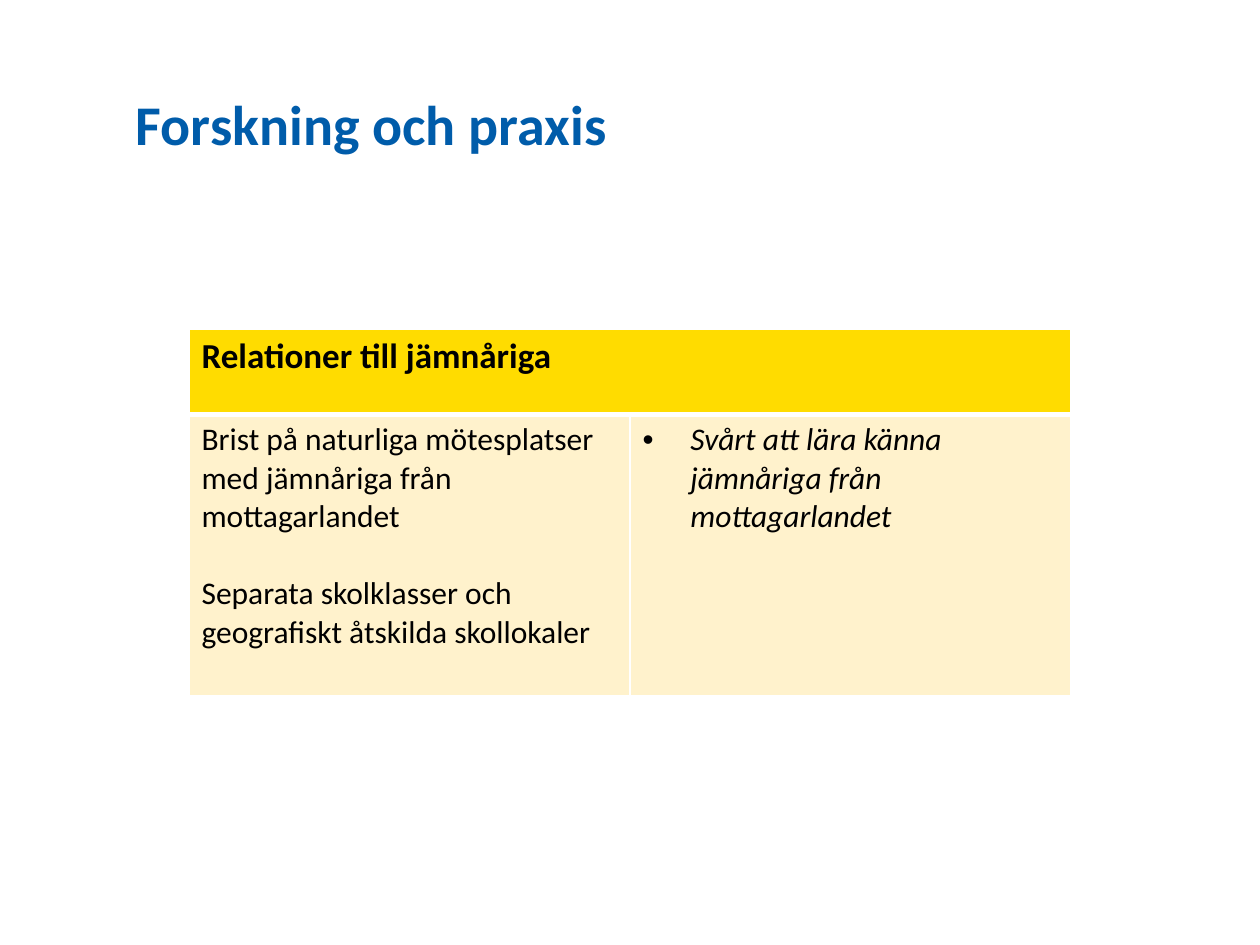
import pptx
import pptx.dml.color
import pptx.enum.text
import pptx.oxml
import pptx.oxml.ns
import pptx.util

Inches, Pt = pptx.util.Inches, pptx.util.Pt

# Content
TITLE = "Forskning och praxis"
HEADING = "Relationer till jämnåriga"
CONDITIONS = [
    "Brist på naturliga mötesplatser med jämnåriga från mottagarlandet",
    "Separata skolklasser och geografiskt åtskilda skollokaler",
]
EXPERIENCES = ["Svårt att lära känna jämnåriga från mottagarlandet"]

THEME = {
    "font": "Calibri",
    "title": "005CAA", "text": "000000", "border": "FFFFFF",
    "heading_fill": "FFDC00", "body_fill": "FFF2CC",
    "title_size": 32, "heading_size": 20, "body_size": 18,
    "paragraph_gap": 22,
}
COLUMN_WIDTH = 3.5
ROW_HEIGHTS = [0.68, 2.23]


def rgb(name):
    return pptx.dml.color.RGBColor.from_string(THEME[name])


def write(frame, lines, size, color="text", bold=False, italic=False, bulleted=False):
    frame.word_wrap = True
    for index, line in enumerate(lines):
        para = frame.paragraphs[0] if index == 0 else frame.add_paragraph()
        para.text = line
        if index:
            para.space_before = Pt(THEME["paragraph_gap"])
        if bulleted:
            add_bullet(para)
        font = para.font
        font.name, font.size = THEME["font"], Pt(THEME[size])
        font.bold, font.italic = bold, italic
        font.color.rgb = rgb(color)


def add_bullet(para):
    properties = para._p.get_or_add_pPr()
    indent = Inches(0.38)
    properties.set("marL", str(indent))
    properties.set("indent", str(-indent))
    namespace = pptx.oxml.ns.nsdecls("a")
    for xml in (f'<a:buFont {namespace} typeface="Arial"/>',
                f'<a:buChar {namespace} char="•"/>'):
        properties.append(pptx.oxml.parse_xml(xml))


def style_cell(cell, fill, bottom=1):
    # Borders precede the fill in the cell properties
    properties = cell._tc.get_or_add_tcPr()
    for side, width in (("L", 1), ("R", 1), ("T", 1), ("B", bottom)):
        properties.append(pptx.oxml.parse_xml(
            f'<a:ln{side} {pptx.oxml.ns.nsdecls("a")} w="{Pt(width)}"><a:solidFill>'
            f'<a:srgbClr val="{THEME["border"]}"/></a:solidFill></a:ln{side}>'))
    cell.fill.solid()
    cell.fill.fore_color.rgb = rgb(fill)


deck = pptx.Presentation()
deck.slide_width, deck.slide_height = Inches(10), Inches(7.5)
slide = deck.slides.add_slide(deck.slide_layouts[6])

# Title
box = slide.shapes.add_textbox(Inches(0.98), Inches(0.66), Inches(8.03), Inches(1.18))
box.text_frame.vertical_anchor = pptx.enum.text.MSO_ANCHOR.TOP
write(box.text_frame, [TITLE], "title_size", color="title", bold=True)

# Table
table = slide.shapes.add_table(
    2, 2, Inches(1.5), Inches(2.61),
    Inches(2 * COLUMN_WIDTH), Inches(sum(ROW_HEIGHTS))).table
table.horz_banding = False
for column in table.columns:
    column.width = Inches(COLUMN_WIDTH)
for row, height in zip(table.rows, ROW_HEIGHTS):
    row.height = Inches(height)

# Heading across both columns
heading = table.cell(0, 0)
heading.merge(table.cell(0, 1))
for column_index in range(2):
    style_cell(table.cell(0, column_index), "heading_fill", bottom=3)
write(heading.text_frame, [HEADING], "heading_size", bold=True)

# Conditions beside the experiences they lead to
for column_index, lines in enumerate([CONDITIONS, EXPERIENCES]):
    cell = table.cell(1, column_index)
    style_cell(cell, "body_fill")
    is_experience = lines is EXPERIENCES
    write(cell.text_frame, lines, "body_size",
          italic=is_experience, bulleted=is_experience)

deck.save("out.pptx")
